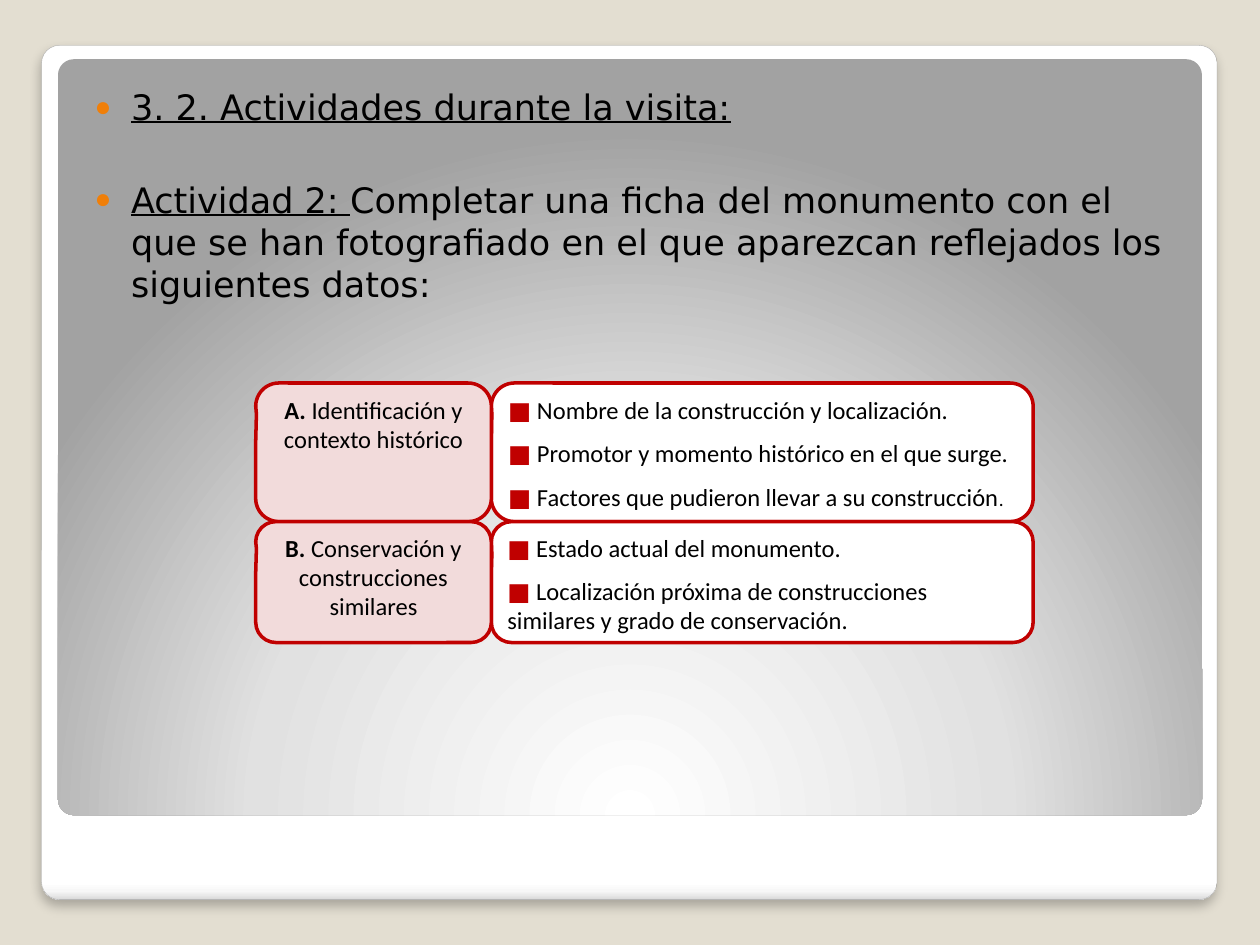
from dataclasses import dataclass

from lxml import etree
from pptx import Presentation
from pptx.dml.color import RGBColor
from pptx.enum.shapes import MSO_SHAPE
from pptx.enum.text import MSO_ANCHOR, MSO_AUTO_SIZE, PP_ALIGN
from pptx.oxml import parse_xml
from pptx.oxml.ns import nsdecls, qn
from pptx.util import Inches, Pt

ROUNDED = MSO_SHAPE.ROUNDED_RECTANGLE
CALLOUT = MSO_SHAPE.ROUNDED_RECTANGULAR_CALLOUT
TOP = MSO_ANCHOR.TOP
NO_FIT = MSO_AUTO_SIZE.NONE
LEFT, CENTER = PP_ALIGN.LEFT, PP_ALIGN.CENTER

BEIGE = RGBColor(0xE3, 0xDE, 0xD1)
WHITE = RGBColor(0xFF, 0xFF, 0xFF)
BLACK = RGBColor(0x00, 0x00, 0x00)
GRAY = RGBColor(0xA4, 0xA4, 0xA4)
RED = RGBColor(0xC0, 0x00, 0x00)
PINK = RGBColor(0xF2, 0xDB, 0xDB)
ORANGE = RGBColor(0xF0, 0x7F, 0x09)

LABEL_LEFT, LABEL_WIDTH = 2.03, 1.87
DETAIL_LEFT, DETAIL_WIDTH = 3.9, 4.3
CARD_TOP = 3.04


@dataclass(frozen=True)
class Span:
    text: str
    size: float = 14
    color: RGBColor = BLACK
    bold: bool = False
    underline: bool = False
    font: str = "Calibri"


@dataclass(frozen=True)
class Card:
    letter: str
    label: str
    details: tuple[str, ...]
    height: float
    tails: tuple[float, float]  # vertical tail position of label and detail
    ending: str = ""  # smaller closing mark after the last detail


CARDS = (
    Card("A. ", "Identificación y contexto histórico",
         ("Nombre de la construcción y localización.",
          "Promotor y momento histórico en el que surge.",
          "Factores que pudieron llevar a su construcción"),
         1.1, (-0.277, -0.277), "."),
    Card("B. ", "Conservación y construcciones similares",
         ("Estado actual del monumento.",
          "Localización próxima de construcciones similares y grado de conservación."),
         0.96, (-0.277, -0.228)),
)


def intro_span(text: str, underline: bool) -> Span:
    return Span(text, size=20, underline=underline, font="DejaVu Sans")


INTRO = (
    [intro_span("3. 2. Actividades durante la visita:", True)],
    [intro_span("Actividad 2: ", True),
     intro_span("Completar una ficha del monumento con el que se han fotografiado "
                "en el que aparezcan reflejados los siguientes datos:", False)],
)


def add_spans(para, spans: list[Span]) -> None:
    for span in spans:
        run = para.add_run()
        run.text = span.text
        run.font.name = span.font
        run.font.size = Pt(span.size)
        run.font.bold = span.bold
        run.font.underline = span.underline
        run.font.color.rgb = span.color


def set_frame(frame, margins: tuple[float, float, float, float]) -> None:
    frame.word_wrap = True
    frame.auto_size = NO_FIT
    frame.vertical_anchor = TOP
    (frame.margin_left, frame.margin_top,
     frame.margin_right, frame.margin_bottom) = map(Inches, margins)


def add_panel(page, left: float, top: float, width: float, height: float,
              stops: list[tuple[int, str]], direction: str):
    panel = page.shapes.add_shape(ROUNDED, Inches(left), Inches(top),
                                  Inches(width), Inches(height))
    panel.adjustments[0] = 0.021
    panel.shadow.inherit = False
    panel.line.fill.background()
    panel.fill.background()
    marks = "".join(f'<a:gs pos="{place * 1000}"><a:srgbClr val="{color}"/></a:gs>'
                    for place, color in stops)
    gradient = parse_xml(f'<a:gradFill {nsdecls("a")} rotWithShape="1">'
                         f'<a:gsLst>{marks}</a:gsLst>{direction}</a:gradFill>')
    properties = panel.element.spPr
    properties.replace(properties.find(qn("a:noFill")), gradient)
    return panel


def add_shadow(shape) -> None:
    effects = shape.element.spPr.find(qn("a:effectLst"))
    shadow = etree.SubElement(effects, qn("a:outerShdw"), blurRad=str(Pt(6)),
                              dist=str(Pt(4)), dir="5400000", algn="t", rotWithShape="0")
    color = etree.SubElement(shadow, qn("a:srgbClr"), val="000000")
    etree.SubElement(color, qn("a:alpha"), val="25000")


def set_bullet(para) -> None:
    properties = para._p.get_or_add_pPr()
    properties.set("marL", str(Inches(0.29)))
    properties.set("indent", str(-Inches(0.29)))
    color = etree.SubElement(properties, qn("a:buClr"))
    etree.SubElement(color, qn("a:srgbClr"), val=str(ORANGE))
    etree.SubElement(properties, qn("a:buSzPct"), val="80000")
    etree.SubElement(properties, qn("a:buChar"), char="●")


def add_callout(page, left: float, top: float, width: float, height: float,
                fill: RGBColor, tail: tuple[float, float],
                lines: list[list[Span]], align: PP_ALIGN) -> None:
    box = page.shapes.add_shape(CALLOUT, Inches(left), Inches(top),
                                Inches(width), Inches(height))
    for index, value in enumerate((*tail, 0.167)):
        box.adjustments[index] = value
    box.shadow.inherit = False
    box.fill.solid()
    box.fill.fore_color.rgb = fill
    box.line.color.rgb = RED
    box.line.width = Pt(2)
    frame = box.text_frame
    set_frame(frame, (0.08, 0.04, 0.08, 0.04))
    for index, spans in enumerate(lines):
        para = frame.add_paragraph() if index else frame.paragraphs[0]
        para.alignment = align
        para.space_after = Pt(8)
        add_spans(para, spans)


def add_card(page, card: Card, top: float) -> None:
    details = [[Span("■", color=RED), Span(f" {detail}")] for detail in card.details]
    if card.ending:
        details[-1].append(Span(card.ending, size=11))
    label = [[Span(card.letter, bold=True), Span(card.label)]]
    label_tail, detail_tail = card.tails
    add_callout(page, DETAIL_LEFT, top, DETAIL_WIDTH, card.height, WHITE,
                (-0.499, detail_tail), details, LEFT)
    add_callout(page, LABEL_LEFT, top, LABEL_WIDTH, card.height, PINK,
                (-0.497, label_tail), label, CENTER)


def fill_intro(body) -> None:
    body.left, body.top = Inches(0.55), Inches(0.58)
    body.width, body.height = Inches(8.95), Inches(4.58)
    frame = body.text_frame
    set_frame(frame, (0.2, 0.1, 0.1, 0.05))
    for index, spans in enumerate(INTRO):
        para = frame.add_paragraph() if index else frame.paragraphs[0]
        para.space_before = Pt(29 if index else 2.5)
        set_bullet(para)
        add_spans(para, spans)


def main() -> None:
    deck = Presentation()
    deck.slide_width, deck.slide_height = Inches(10), Inches(7.5)
    page = deck.slides.add_slide(deck.slide_layouts[1])
    page.background.fill.solid()
    page.background.fill.fore_color.rgb = BEIGE

    # The page has body text but no title
    title = page.shapes.title.element
    title.getparent().remove(title)
    body = page.placeholders[1]

    # White frame and gray panel
    frame = add_panel(page, 0.33, 0.36, 9.33, 6.78,
                      [(0, "FFFFFF"), (98, "FFFFFF"), (99, "F7F7F7"), (100, "DADADA")],
                      '<a:lin ang="5400000" scaled="0"/>')
    frame.line.color.rgb = GRAY
    frame.line.width = Pt(0.16)
    add_shadow(frame)
    add_panel(page, 0.46, 0.47, 9.08, 6,
              [(0, "FFFFFF"), (55, "E1E1E1"), (100, "A2A2A2")],
              '<a:path path="circle"><a:fillToRect l="50000" t="175000" '
              'r="50000" b="-75000"/></a:path>')

    # Introduction, raised above the panels
    body.element.getparent().append(body.element)
    fill_intro(body)

    # Record card sections, stacked without gaps
    top = CARD_TOP
    for card in CARDS:
        add_card(page, card, top)
        top += card.height

    deck.save("out.pptx")


if __name__ == "__main__":
    main()
